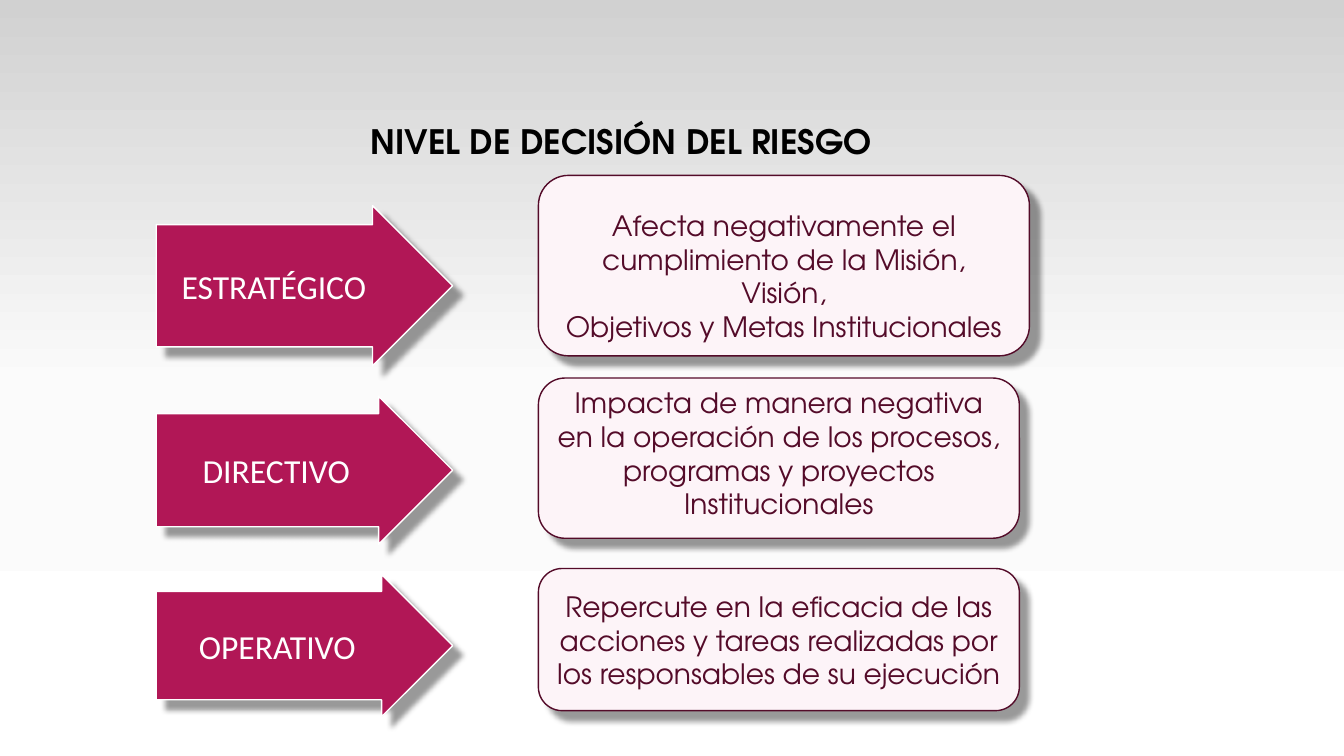
import copy
import pptx
import pptx.util
import pptx.dml.color
import pptx.enum.shapes
import pptx.enum.text
import pptx.oxml

Inches = pptx.util.Inches
Pt = pptx.util.Pt
KIND = pptx.enum.shapes.MSO_SHAPE
ALIGN = pptx.enum.text.PP_ALIGN
ANCHOR = pptx.enum.text.MSO_ANCHOR
SHADOW = (
    '<a:outerShdw xmlns:a="http://schemas.openxmlformats.org/drawingml/2006/main"'
    ' blurRad="50800" dist="119380" dir="2700000" algn="tl" rotWithShape="0">'
    '<a:srgbClr val="000000"><a:alpha val="40000"/></a:srgbClr></a:outerShdw>'
)


def color(code):
    return pptx.dml.color.RGBColor.from_string(code)


def write(frame, lines, font, size, code, bold=False):
    frame.word_wrap = True
    for i, line in enumerate(lines):
        para = frame.paragraphs[0] if i == 0 else frame.add_paragraph()
        para.alignment = ALIGN.CENTER
        run = para.add_run()
        run.text = line
        run.font.name = font
        run.font.size = Pt(size)
        run.font.bold = bold
        run.font.color.rgb = color(code)


deck = pptx.Presentation()
deck.slide_width = Inches(13.33)
deck.slide_height = Inches(7.5)
slide = deck.slides.add_slide(deck.slide_layouts[6])

back = slide.background.fill
back.gradient()
back.gradient_angle = 90
stops = slide.element.xpath(".//a:gsLst")[0]
stops.append(copy.deepcopy(stops[1]))
shades = [(0, "FFFFFF"), (0.49, "FBFBFB"), (1, "D1D1D1")]
for stop, (place, code) in zip(back.gradient_stops, shades):
    stop.position = place
    stop.color.rgb = color(code)

title = slide.shapes.add_textbox(Inches(1.16), Inches(1.14), Inches(10), Inches(0.51))
title.text_frame.vertical_anchor = ANCHOR.BOTTOM
write(title.text_frame, ["NIVEL DE DECISIÓN DEL RIESGO"], "TeX Gyre Adventor", 24, "000000", True)
title.text_frame.paragraphs[0].line_spacing = 0.9

levels = [
    ("ESTRATÉGICO", 2.04, 1.59, 1.74, 4.87, 1.79, 0.24,
     ["Afecta negativamente el cumplimiento de la Misión, Visión,",
      "Objetivos y Metas Institucionales"]),
    ("DIRECTIVO", 3.93, 1.47, 3.75, 4.77, 1.59, 0,
     ["Impacta de manera negativa en la operación de los procesos, "
      "programas y proyectos Institucionales"]),
    ("OPERATIVO", 5.7, 1.41, 5.64, 4.77, 1.41, 0.14,
     ["Repercute en la eficacia de las acciones y tareas realizadas por "
      "los responsables de su ejecución"]),
]
for name, top, high, edge, wide, tall, inset, lines in levels:
    arrow = slide.shapes.add_shape(
        KIND.RIGHT_ARROW, Inches(1.55), Inches(top), Inches(2.94), Inches(high))
    arrow.adjustments[0] = 0.763
    arrow.adjustments[1] = 0.5
    arrow.text_frame.vertical_anchor = ANCHOR.MIDDLE
    write(arrow.text_frame, [name], "Calibri", 24, "FFFFFF")

    box = slide.shapes.add_shape(
        KIND.ROUNDED_RECTANGLE, Inches(5.34), Inches(edge), Inches(wide), Inches(tall))
    box.text_frame.vertical_anchor = ANCHOR.TOP
    box.text_frame.margin_top = Inches(inset)
    write(box.text_frame, lines, "TeX Gyre Adventor", 20, "540B29")

    for shape, fill, line in [(arrow, "B11756", "FFFFFF"), (box, "FDF4F8", "540B29")]:
        shape.fill.solid()
        shape.fill.fore_color.rgb = color(fill)
        shape.line.color.rgb = color(line)
        shape.line.width = Pt(1)
        shape.shadow.inherit = False
        effects = shape.element.spPr.xpath("a:effectLst")[0]
        effects.append(pptx.oxml.parse_xml(SHADOW))

deck.save("out.pptx")
